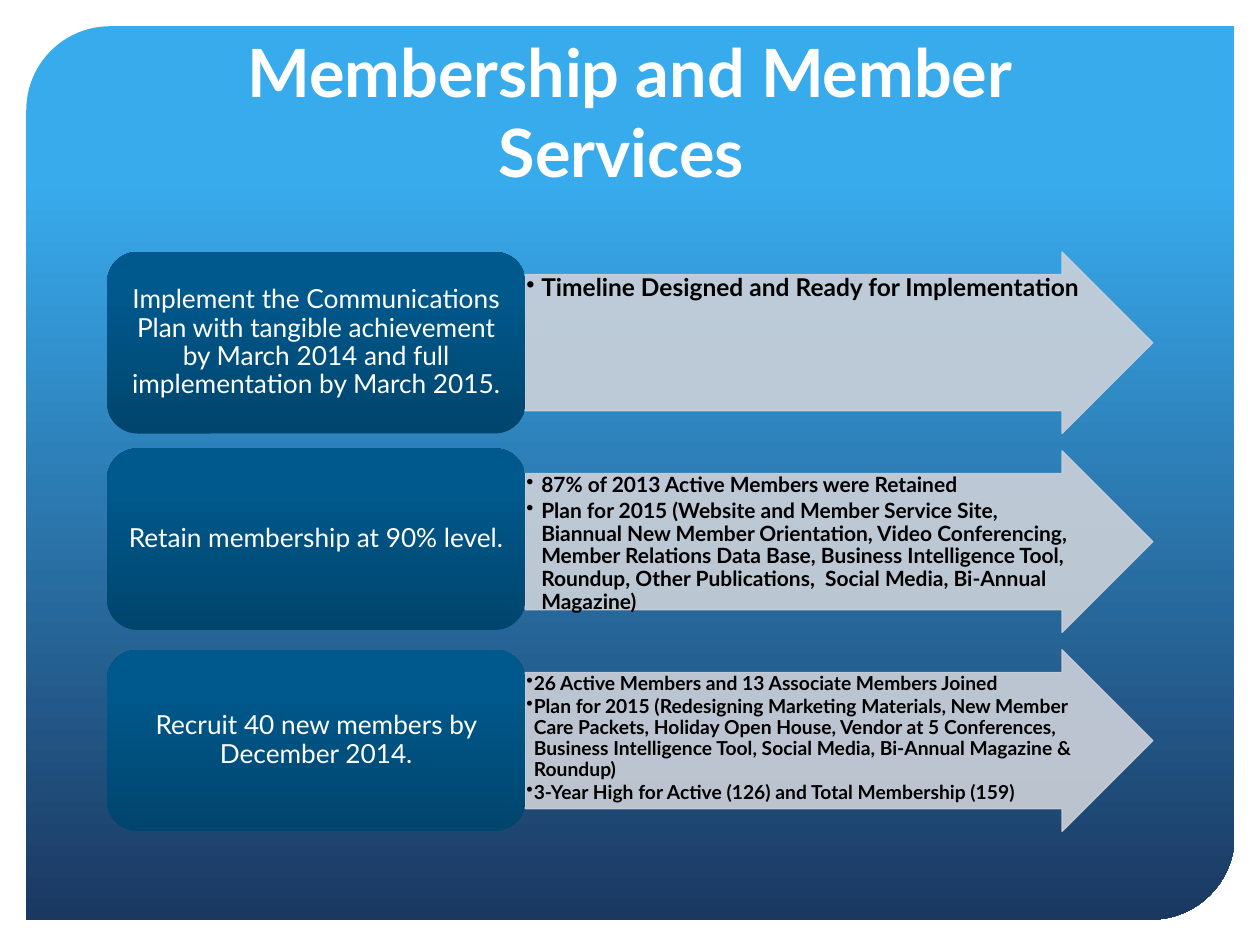
from dataclasses import dataclass

from lxml.etree import SubElement
from pptx import Presentation
from pptx.dml.color import RGBColor
from pptx.enum.shapes import MSO_SHAPE
from pptx.enum.text import MSO_ANCHOR, PP_ALIGN
from pptx.oxml.ns import qn
from pptx.util import Cm, Pt


@dataclass(frozen=True)
class Theme:
    font: str = "Lato"
    sky: str = "38ABED"
    navy: str = "1B3861"
    goal_dark: str = "00456D"
    goal_light: str = "00598D"
    arrow: str = "CCD1D9"
    light_text: str = "FFFFFF"
    dark_text: str = "000000"
    title_size: int = 38
    goal_size: int = 15
    arrow_alpha: int = 90


THEME = Theme()

# goal, results, result size in points, bullet indent, upward shift of the goal box
ROWS = [
    ("Implement the Communications Plan with tangible achievement by March 2014 "
     "and full implementation by March 2015.",
     ["Timeline Designed and Ready for Implementation"], 14, 0.3, 0),
    ("Retain membership at 90% level.",
     ["87% of 2013 Active Members were Retained",
      "Plan for 2015 (Website and Member Service Site, Biannual New Member "
      "Orientation, Video Conferencing, Member Relations Data Base, Business "
      "Intelligence Tool, Roundup, Other Publications,  Social Media, Bi-Annual "
      "Magazine)"], 12, 0.3, 0.05),
    ("Recruit 40 new members by December 2014.",
     ["26 Active Members and 13 Associate Members Joined",
      "Plan for 2015 (Redesigning Marketing Materials, New Member Care Packets, "
      "Holiday Open House, Vendor at 5 Conferences, Business Intelligence Tool, "
      "Social Media, Bi-Annual Magazine & Roundup)",
      "3-Year High for Active (126) and Total Membership (159)"], 11, 0.15, 0),
]


def add_bullet(p, indent):
    pPr = p._p.get_or_add_pPr()
    pPr.set("marL", str(Cm(indent)))
    pPr.set("indent", str(-Cm(indent)))
    SubElement(pPr, qn("a:buChar")).set("char", "•")


def write_text(sp, paragraphs, *, size, color, bold=False, align=PP_ALIGN.LEFT,
               anchor=MSO_ANCHOR.TOP, insets=(0.25, 0.13), line_spacing=None,
               gap=0, bullet_indent=None):
    """Fill a shape with text; insets are (horizontal, vertical) in cm."""
    tf = sp.text_frame
    tf.word_wrap = True
    tf.vertical_anchor = anchor
    tf.margin_left = tf.margin_right = Cm(insets[0])
    tf.margin_top = tf.margin_bottom = Cm(insets[1])
    for i, text in enumerate(paragraphs):
        p = tf.add_paragraph() if i else tf.paragraphs[0]
        if bullet_indent is not None:
            add_bullet(p, bullet_indent)
        p.alignment = align
        p.line_spacing = line_spacing
        p.space_after = Pt(gap)
        r = p.add_run()
        r.text = text
        r.font.name = THEME.font
        r.font.size = Pt(size)
        r.font.bold = bold
        r.font.color.rgb = RGBColor.from_string(color)


def add_preset(slide, preset, box, adjustments=()):
    sp = slide.shapes.add_shape(preset, *(Cm(v) for v in box))
    sp.shadow.inherit = False
    for i, value in enumerate(adjustments):
        sp.adjustments[i] = value
    return sp


def fill_gradient(sp, stops, angle):
    """Two (position, colour) stops; the angle runs counter-clockwise."""
    sp.fill.gradient()
    sp.fill.gradient_angle = angle
    for stop, (position, color) in zip(sp.fill.gradient_stops, stops):
        stop.position = position
        stop.color.rgb = RGBColor.from_string(color)
    sp.line.fill.background()


def fill_translucent(sp, color, alpha):
    """Give fill and outline the same see-through colour."""
    sp.line.width = Pt(0.75)
    for fill in (sp.fill, sp.line.fill):
        fill.solid()
        fill.fore_color.rgb = RGBColor.from_string(color)
    for clr in sp._element.spPr.iter(qn("a:srgbClr")):
        SubElement(clr, qn("a:alpha")).set("val", str(alpha * 1000))


def add_backdrop(slide, box):
    sp = add_preset(slide, MSO_SHAPE.ROUND_2_DIAG_RECTANGLE, box, (0.094, 0))
    fill_gradient(sp, [(0.17, THEME.sky), (1, THEME.navy)], 270)


def add_title(slide, box, text):
    sp = slide.shapes.add_textbox(*(Cm(v) for v in box))
    write_text(sp, [text], size=THEME.title_size, color=THEME.light_text,
               bold=True, align=PP_ALIGN.CENTER, anchor=MSO_ANCHOR.BOTTOM)


def add_goal_row(slide, box, goal, results, size, indent, lift):
    """A goal box on the left 40 % and an arrow of results on the rest."""
    left, top, width, height = box
    goal_width = 0.4 * width

    arrow = add_preset(slide, MSO_SHAPE.RIGHT_ARROW,
                       (left + goal_width, top, width - goal_width, height),
                       (0.75, 0.5))
    fill_translucent(arrow, THEME.arrow, THEME.arrow_alpha)
    write_text(arrow, results, size=size, color=THEME.dark_text, bold=True,
               insets=(0.02, 0.02), line_spacing=0.9, gap=0.15 * size,
               bullet_indent=indent)

    sp = add_preset(slide, MSO_SHAPE.ROUNDED_RECTANGLE,
                    (left, top - lift, goal_width, height))
    fill_gradient(sp, [(0, THEME.goal_dark), (0.8, THEME.goal_light)], 90)
    write_text(sp, [goal], size=THEME.goal_size, color=THEME.light_text,
               align=PP_ALIGN.CENTER, anchor=MSO_ANCHOR.MIDDLE,
               insets=(0.15, 0.08), line_spacing=0.9)


def add_goal_list(slide, box, rows, gap):
    left, top, width, height = box
    row_height = (height - gap * (len(rows) - 1)) / len(rows)
    for i, row in enumerate(rows):
        row_top = top + i * (row_height + gap)
        add_goal_row(slide, (left, row_top, width, row_height), *row)


def main():
    prs = Presentation()
    prs.slide_width, prs.slide_height = Cm(25.4), Cm(19.05)
    slide = prs.slides.add_slide(prs.slide_layouts[6])
    add_backdrop(slide, (0.53, 0.53, 24.36, 18.01))
    add_title(slide, (2.16, 1.07, 21.06, 2.9), "Membership and Member Services ")
    add_goal_list(slide, (2.16, 5.08, 21.08, 11.68), ROWS, gap=0.35)
    prs.save("out.pptx")


if __name__ == "__main__":
    main()
